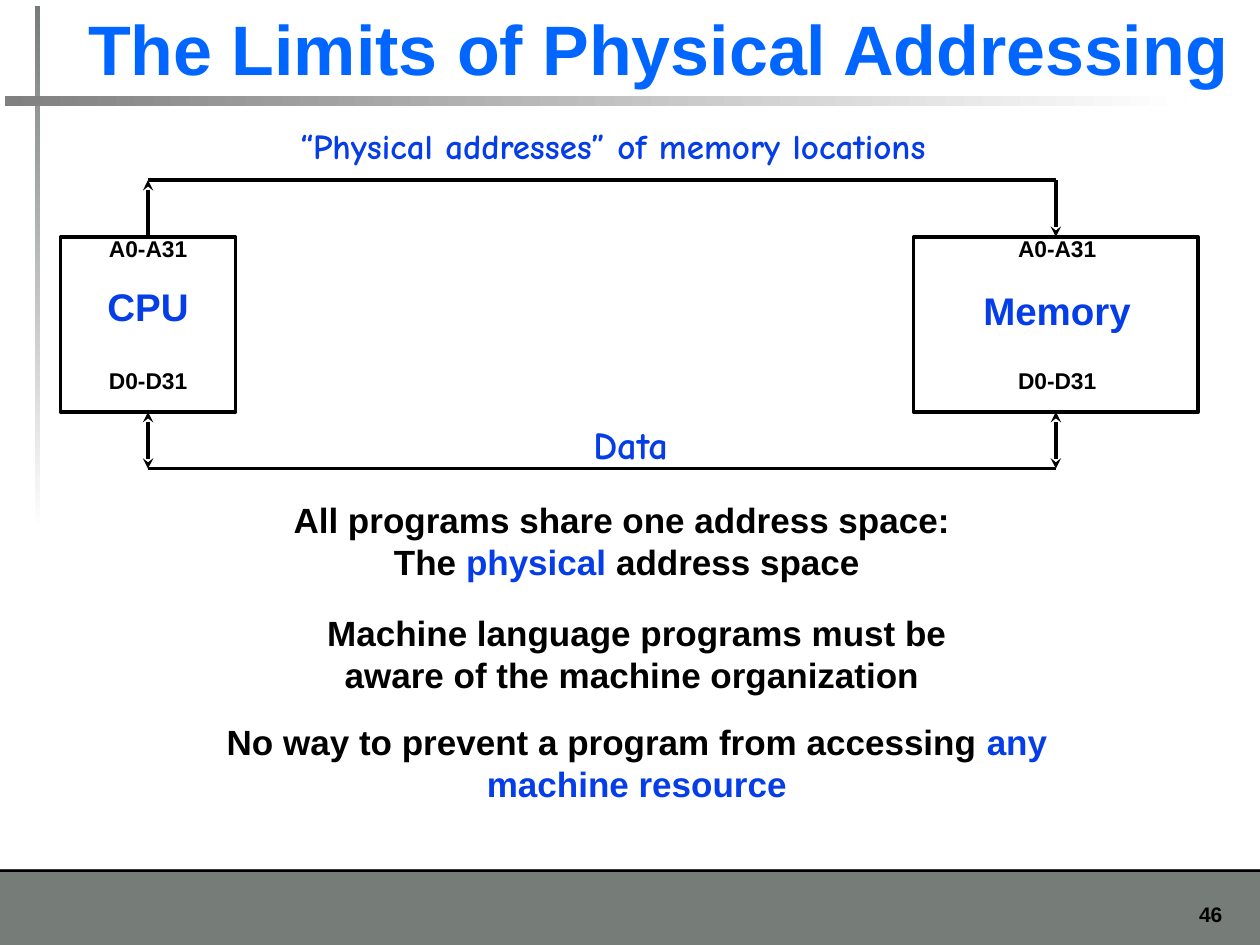
import pptx
import pptx.dml.color
import pptx.enum.shapes
import pptx.enum.text
import pptx.oxml
import pptx.oxml.ns
import pptx.util
from pptx.util import Inches

RGBColor = pptx.dml.color.RGBColor
BLACK = RGBColor(0x00, 0x00, 0x00)
WHITE = RGBColor(0xFF, 0xFF, 0xFF)
BAND_GRAY = RGBColor(0x76, 0x7D, 0x79)
RULE_GRAY = RGBColor(0x80, 0x80, 0x80)
TITLE_BLUE = RGBColor(0x00, 0x66, 0xFF)
BLUE = RGBColor(0x05, 0x3D, 0xE8)
ALIGN = pptx.enum.text.PP_ALIGN
ANCHOR = pptx.enum.text.MSO_ANCHOR
TOP, BOTTOM = 0, 2


def add_text(slide, box, paragraphs, size, color=BLACK, font="Arial", align=ALIGN.CENTER,
             anchor=ANCHOR.TOP, spacing=None, wrap=True, insets=(0, 0)):
    """Add a bold text box; paragraphs are lists of (text, color or None) runs."""
    frame = slide.shapes.add_textbox(*map(Inches, box)).text_frame
    frame.word_wrap = wrap
    frame.auto_size = pptx.enum.text.MSO_AUTO_SIZE.SHAPE_TO_FIT_TEXT
    frame.vertical_anchor = anchor
    frame.margin_left = frame.margin_right = Inches(insets[0])
    frame.margin_top = frame.margin_bottom = Inches(insets[1])
    for index, runs in enumerate(paragraphs):
        paragraph = frame.add_paragraph() if index else frame.paragraphs[0]
        paragraph.alignment = align
        if spacing:
            paragraph.line_spacing = pptx.util.Pt(spacing)
        for text, run_color in runs:
            run = paragraph.add_run()
            run.text = text
            run.font.name = font
            run.font.size = pptx.util.Pt(size)
            run.font.bold = True
            run.font.color.rgb = run_color or color


def add_rectangle(slide, box, fill=None, fade_angle=None, outlined=False):
    """Add a rectangle that is hollow, solid, or fading to white."""
    rectangle = slide.shapes.add_shape(
        pptx.enum.shapes.MSO_SHAPE.RECTANGLE, *map(Inches, box))
    rectangle.shadow.inherit = False
    if fill is None:
        rectangle.fill.background()
    elif fade_angle is None:
        rectangle.fill.solid()
        rectangle.fill.fore_color.rgb = fill
    else:
        rectangle.fill.gradient()
        rectangle.fill.gradient_angle = fade_angle
        for stop, color, position in zip(rectangle.fill.gradient_stops, (fill, WHITE), (0, 1)):
            stop.color.rgb = color
            stop.position = position
    if outlined:
        rectangle.line.color.rgb = BLACK
        rectangle.line.width = pptx.util.Pt(2)
    else:
        rectangle.line.fill.background()
    return rectangle


def add_line(slide, start, end, arrows=()):
    """Add a straight black line with stealth arrowheads at the named ends."""
    line = slide.shapes.add_connector(
        pptx.enum.shapes.MSO_CONNECTOR.STRAIGHT, *map(Inches, start + end))
    line.line.color.rgb = BLACK
    line.line.width = pptx.util.Pt(2)
    outline = line.line._get_or_add_ln()
    for arrow in arrows:
        pptx.oxml.ns.qn("a:" + arrow)
        head = pptx.oxml.parse_xml(
            f'<a:{arrow} {pptx.oxml.ns.nsdecls("a")} type="stealth"/>')
        outline.append(head)
    outline.addnext(pptx.oxml.parse_xml(f'<a:effectLst {pptx.oxml.ns.nsdecls("a")}/>'))
    return line


def add_frame(slide, width, height):
    """Draw the footer band, page number, fading rules and title."""
    band_height = 0.6
    band_top = height - band_height
    add_rectangle(slide, (0, band_top, width, band_height), BAND_GRAY)
    add_rectangle(slide, (0, band_top, width, 0.02), BLACK)
    add_text(slide, (width - 0.83, band_top + 0.21, 0.63, 0.3), [[("46", None)]], 12,
             align=ALIGN.RIGHT, insets=(0.1, 0.05))
    add_rectangle(slide, (0.28, 0.05, 0.04, 4.17), BAND_GRAY, fade_angle=270)
    add_rectangle(slide, (0.04, 0.76, 9.37, 0.08), RULE_GRAY, fade_angle=0)
    add_text(slide, (0.57, 0.04, 9.76, 0.72), [[("The Limits of Physical Addressing", None)]],
             40, TITLE_BLUE, align=ALIGN.LEFT, anchor=ANCHOR.BOTTOM, insets=(0.13, 0.05))


def add_unit(slide, box, name, name_spacing, label_shift):
    """Draw one hardware unit with its name and its address and data pins."""
    left, top, width, height = box
    unit = add_rectangle(slide, box, outlined=True)
    add_text(slide, (left + label_shift, top + 0.5, width, 0.36), [[(name, None)]], 22, BLUE,
             spacing=name_spacing, wrap=False)
    for pins, offset, pin_height in (("A0-A31", 0.1, 0.1), ("D0-D31", 1.15, 0.22)):
        add_text(slide, (left + label_shift, top + offset, width, pin_height),
                 [[(pins, None)]], 13, spacing=7, wrap=False)
    return unit


def add_buses(slide, box, cpu, memory):
    """Join the two units by an address bus above and a data bus below."""
    left, top, width, height = box
    address_y, data_y = top - 0.45, top + height + 0.45
    cpu_x, memory_x = ((unit.left + unit.width / 2) / Inches(1) for unit in (cpu, memory))
    add_line(slide, (cpu_x, data_y), (memory_x, data_y))
    add_line(slide, (cpu_x, address_y), (memory_x, address_y))
    drops = (
        (cpu, cpu_x, address_y, TOP, ("headEnd",)),
        (memory, memory_x, address_y, TOP, ("tailEnd",)),
        (cpu, cpu_x, data_y, BOTTOM, ("headEnd", "tailEnd")),
        (memory, memory_x, data_y, BOTTOM, ("headEnd", "tailEnd")),
    )
    for unit, x, bus_y, side, arrows in drops:
        edge_y = top if side == TOP else top + height
        add_line(slide, (x, bus_y), (x, edge_y), arrows).end_connect(unit, side)
    add_text(slide, (left + 1.53, top - 0.89, 5.81, 0.33),
             [[("“Physical addresses” of memory locations ", None)]], 20, BLUE, "Comic Neue")
    add_text(slide, (left + 4.02, top + 1.46, 1.01, 0.35), [[("Data", None)]], 22, BLUE,
             "Comic Neue")


def add_diagram(slide, box):
    """Draw the CPU and memory with their buses."""
    left, top, width, height = box
    memory_width = 2.26
    cpu = add_unit(slide, (left, top, height, height), "CPU", 17, 0)
    memory = add_unit(slide, (left + width - memory_width, top, memory_width, height),
                      "Memory", 19, 0.01)
    add_buses(slide, box, cpu, memory)


def add_limits(slide, box):
    """Write the three consequences below the diagram."""
    left, top, width, height = box
    limits = (
        (-0.08, 0, [[("All programs share one address space: ", None)],
                    [("The ", None), ("physical", BLUE), (" address space", None)]]),
        (0, 0.89, [[("Machine language programs must be", None)],
                   [("aware of the machine organization ", None)]]),
        (0, 1.76, [[("No way to prevent a program from accessing ", None),
                    ("any machine resource", BLUE)]]),
    )
    for shift, offset, paragraphs in limits:
        add_text(slide, (left + shift, top + offset, width, 0.67), paragraphs, 20)


def main():
    """Build and save the slide."""
    presentation = pptx.Presentation()
    presentation.slide_width, presentation.slide_height = Inches(10), Inches(7.5)
    slide = presentation.slides.add_slide(presentation.slide_layouts[6])
    add_frame(slide, 10, 7.5)
    add_diagram(slide, (0.48, 1.88, 9.03, 1.39))
    add_limits(slide, (1.38, 3.96, 7.35, 2.43))
    presentation.save("out.pptx")


if __name__ == "__main__":
    main()
